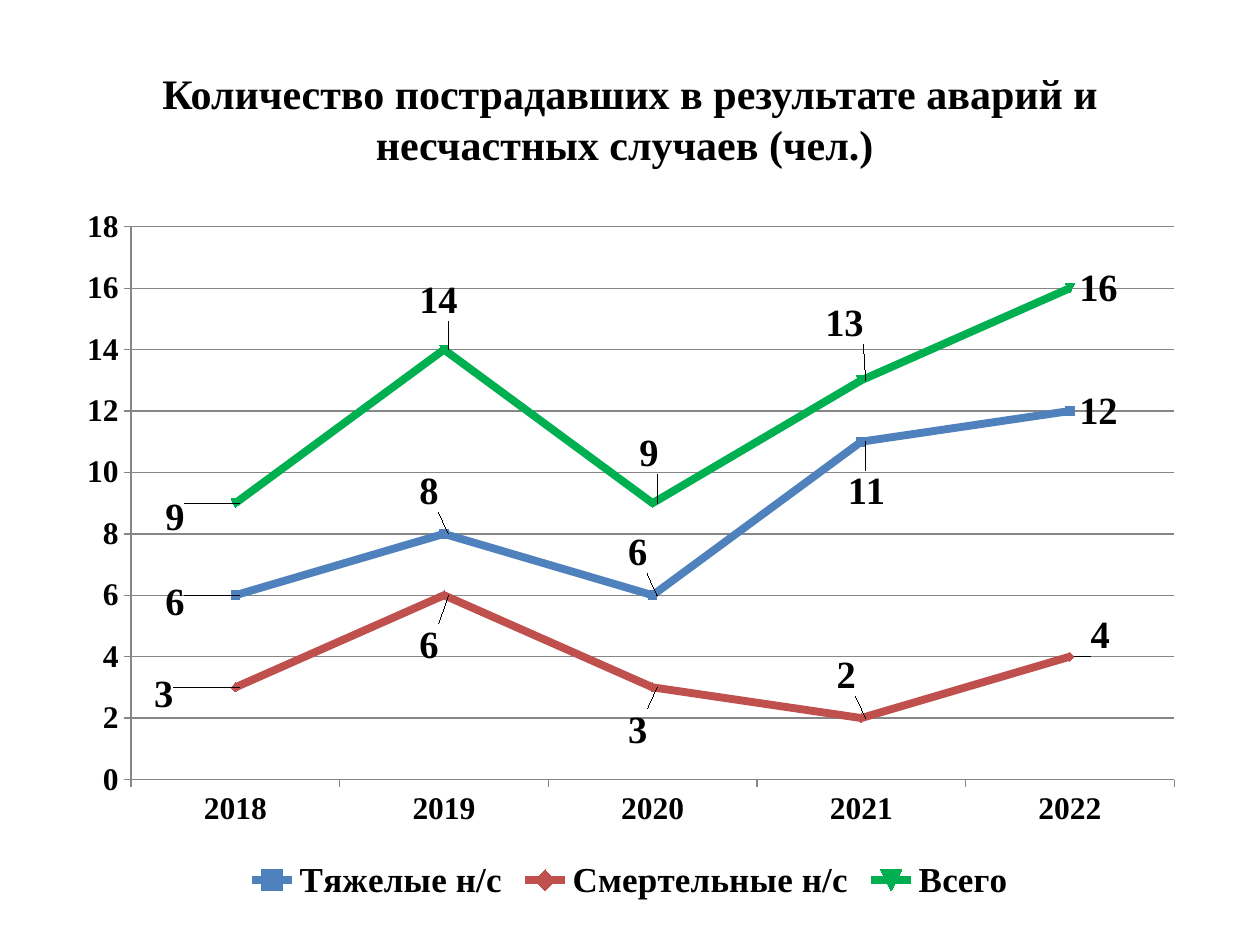
import pptx
import pptx.chart.data
import pptx.dml.color
import pptx.enum.chart
import pptx.enum.text
import pptx.oxml
import pptx.oxml.ns
import pptx.util

BLACK = pptx.dml.color.RGBColor(0x00, 0x00, 0x00)
GRAY = pptx.dml.color.RGBColor(0x86, 0x86, 0x86)
BLUE = pptx.dml.color.RGBColor(0x4F, 0x81, 0xBD)
RED = pptx.dml.color.RGBColor(0xC0, 0x50, 0x4D)
GREEN = pptx.dml.color.RGBColor(0x00, 0xB0, 0x50)

YEARS = ["2018", "2019", "2020", "2021", "2022"]
# Name, colour, values, and label shifts by point as shares of the chart.
SERIES = [
    ("Тяжелые н/с", BLUE, (6, 8, 6, 11, 12),
     [(-0.07, 0.01), (-0.03, -0.06), (-0.03, -0.06), (-0.02, 0.07)]),
    ("Смертельные н/с", RED, (3, 6, 3, 2, 4),
     [(-0.08, 0.01), (-0.03, 0.07), (-0.03, 0.06), (-0.03, -0.06), (0.01, -0.03)]),
    ("Всего", GREEN, (9, 14, 9, 13, 16),
     [(-0.07, 0.02), (-0.03, -0.07), (-0.02, -0.07), (-0.04, -0.08)]),
]


def manual_layout(**settings):
    """Return a c:layout element with the given manual settings, in order."""
    children = "".join(f'<c:{name} val="{value}"/>' for name, value in settings.items())
    return pptx.oxml.parse_xml(
        f'<c:layout {pptx.oxml.ns.nsdecls("c")}>'
        f"<c:manualLayout>{children}</c:manualLayout></c:layout>"
    )


class SlideBuilder:
    font_name = "Times New Roman"

    def __init__(self, deck):
        self.deck = deck
        self.slide = deck.slides.add_slide(deck.slide_layouts[6])

    def frame(self, left, top, width, height):
        """Turn shares of the slide's size into lengths."""
        wide, high = self.deck.slide_width, self.deck.slide_height
        return round(left * wide), round(top * high), round(width * wide), round(height * high)

    def style_font(self, font, size):
        font.name = self.font_name
        font.size = pptx.util.Pt(size)
        font.bold = True
        font.color.rgb = BLACK

    def title(self, text, area, size):
        box = self.slide.shapes.add_textbox(*self.frame(*area))
        text_frame = box.text_frame
        text_frame.word_wrap = True
        text_frame.vertical_anchor = pptx.enum.text.MSO_ANCHOR.MIDDLE
        text_frame.text = text
        para = text_frame.paragraphs[0]
        para.alignment = pptx.enum.text.PP_ALIGN.CENTER
        for span in para.runs:
            self.style_font(span.font, size)

    def line_chart(self, area):
        data = pptx.chart.data.CategoryChartData()
        data.categories = YEARS
        for name, _, values, _ in SERIES:
            data.add_series(name, values)
        chart = self.slide.shapes.add_chart(
            pptx.enum.chart.XL_CHART_TYPE.LINE_MARKERS, *self.frame(*area), data
        ).chart
        chart.has_title = False
        self.style_font(chart.font, 18)
        self.style_axes(chart)
        chart.has_legend = True
        chart.legend.position = pptx.enum.chart.XL_LEGEND_POSITION.BOTTOM
        chart.legend.include_in_layout = False
        self.style_font(chart.legend.font, 20)
        for series, (_, color, _, shifts) in zip(chart.plots[0].series, SERIES):
            self.style_series(series, color)
            self.label_series(series, shifts)

    def style_axes(self, chart):
        value_axis = chart.value_axis
        value_axis.minimum_scale, value_axis.maximum_scale = 0, 18
        value_axis.major_unit = 2
        value_axis.has_major_gridlines = True
        for line in (
            value_axis.major_gridlines.format.line,
            value_axis.format.line,
            chart.category_axis.format.line,
        ):
            line.color.rgb = GRAY
            line.width = pptx.util.Pt(0.75)
        plot_area = chart.plots[0]._element.getparent()
        for old_layout in plot_area.findall(pptx.oxml.ns.qn("c:layout")):
            plot_area.remove(old_layout)
        plot_area.insert(0, manual_layout(
            layoutTarget="inner", xMode="edge", yMode="edge", x=0.06, y=0.04, w=0.92, h=0.78
        ))

    def style_series(self, series, color):
        series.smooth = False
        series.format.line.color.rgb = color
        series.format.line.width = pptx.util.Pt(4.5)
        series.marker.size = 5
        series.marker.format.fill.solid()
        series.marker.format.fill.fore_color.rgb = color
        series.marker.format.line.color.rgb = color

    def label_series(self, series, shifts):
        right = pptx.enum.chart.XL_LABEL_POSITION.RIGHT
        labels = series.data_labels
        labels.show_value = True
        labels.position = right
        self.style_font(labels.font, 22)
        for index in range(len(shifts)):
            label = series.points[index].data_label
            self.style_font(label.font, 22)
            label.position = right
        label_elements = series._element.findall(".//" + pptx.oxml.ns.qn("c:dLbl"))
        for element, (x, y) in zip(label_elements, shifts):
            element.insert(1, manual_layout(x=x, y=y))


def main():
    deck = pptx.Presentation()
    deck.slide_width = pptx.util.Inches(10)
    deck.slide_height = pptx.util.Inches(7.5)
    builder = SlideBuilder(deck)
    builder.title(
        "Количество пострадавших в результате аварий и несчастных случаев (чел.) ",
        (0.05, 0.04, 0.9, 0.17), 24,
    )
    builder.line_chart((0.05, 0.21, 0.9, 0.75))
    deck.save("out.pptx")


if __name__ == "__main__":
    main()
